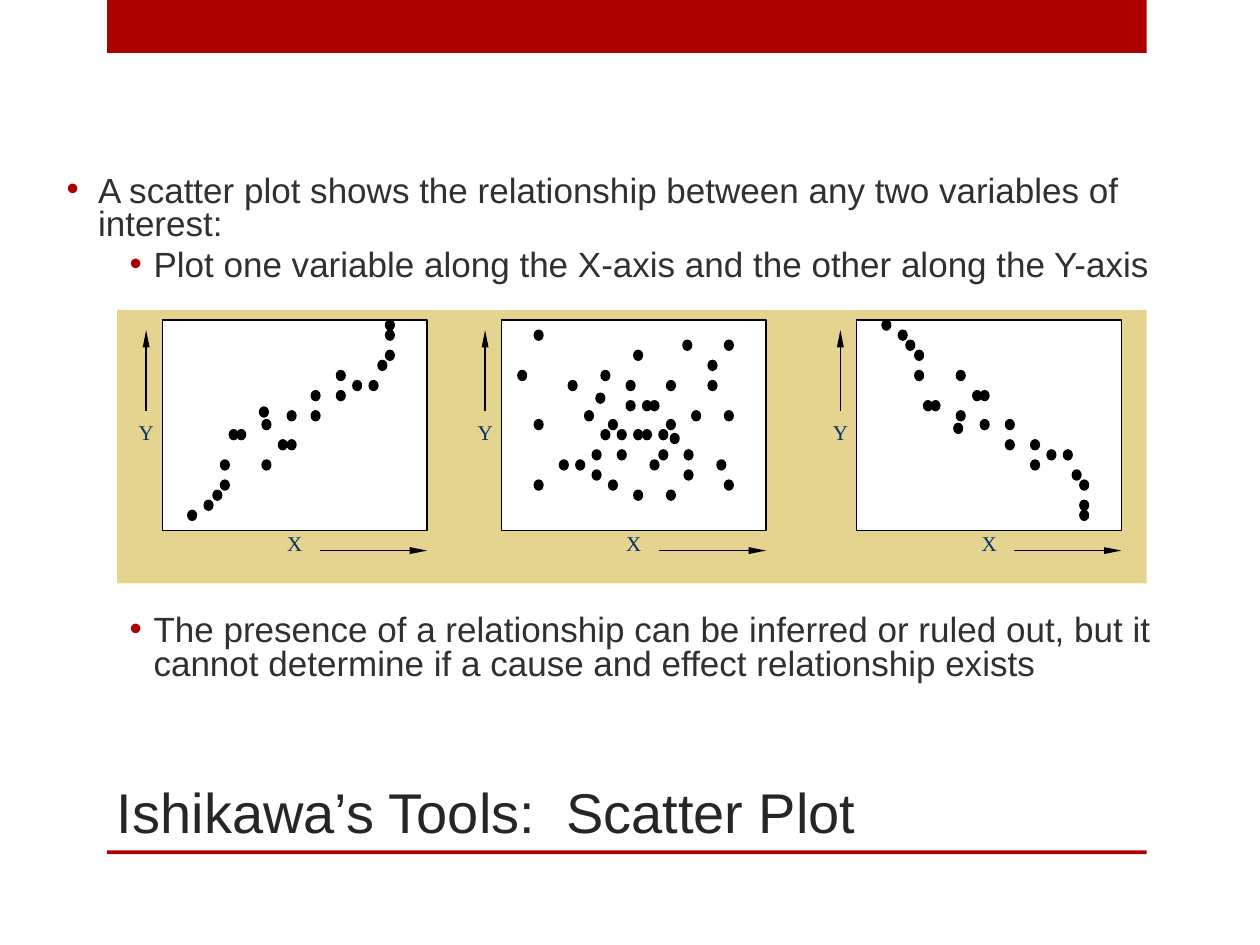
import pptx
import pptx.util
import pptx.dml.color
import pptx.enum.shapes
import pptx.enum.text
import pptx.oxml
import pptx.oxml.ns
from pptx.util import Inches

COLORS = {"red": "AD0101", "sand": "E4D490", "white": "FFFFFF", "black": "000000",
          "body": "303030", "title": "262626", "axis": "003366"}
SHAPES = pptx.enum.shapes.MSO_SHAPE
ANCHORS = pptx.enum.text.MSO_ANCHOR
NS = pptx.oxml.ns.nsdecls("a")


def add_block(shapes, kind, left, top, width, height, fill, line=None):
    block = shapes.add_shape(kind, Inches(left), Inches(top), Inches(width), Inches(height))
    block.shadow.inherit = False
    block.fill.solid()
    block.fill.fore_color.rgb = pptx.dml.color.RGBColor.from_string(COLORS[fill])
    if line:
        block.line.color.rgb = pptx.dml.color.RGBColor.from_string(COLORS[line])
        block.line.width = pptx.util.Pt(0.75)
    else:
        block.line.fill.background()


def add_text(shapes, paragraphs, box, size, color, font="Arial", anchor=ANCHORS.TOP,
             inset=(0.1, 0.05), indents=None):
    frame = shapes.add_textbox(*[Inches(length) for length in box]).text_frame
    frame.word_wrap = True
    frame.vertical_anchor = anchor
    frame.margin_left = frame.margin_right = Inches(inset[0])
    frame.margin_top = frame.margin_bottom = Inches(inset[1])
    for index, text in enumerate(paragraphs):
        paragraph = frame.add_paragraph() if index else frame.paragraphs[0]
        run = paragraph.add_run()
        run.text = text
        run.font.size = pptx.util.Pt(size)
        run.font.name = font
        run.font.color.rgb = pptx.dml.color.RGBColor.from_string(COLORS[color])
        if indents:
            level, margin, hanging = indents[index]
            paragraph.level = level
            paragraph.line_spacing = 0.8
            paragraph.space_before = pptx.util.Pt(4 if index else 0)
            properties = paragraph._p.get_or_add_pPr()
            properties.set("marL", str(Inches(margin)))
            properties.set("indent", str(-Inches(hanging)))
            for xml in (f'<a:buClr {NS}><a:srgbClr val="{COLORS["red"]}"/></a:buClr>',
                        f'<a:buFont {NS} typeface="Arial"/>',
                        f'<a:buChar {NS} char="•"/>'):
                properties.append(pptx.oxml.parse_xml(xml))


presentation = pptx.Presentation()
presentation.slide_width = Inches(10)
presentation.slide_height = Inches(7.5)
slide = presentation.slides.add_slide(presentation.slide_layouts[6])

add_block(slide.shapes, SHAPES.RECTANGLE, 0.85, 0, 8.25, 0.42, "red")
add_block(slide.shapes, SHAPES.RECTANGLE, 0.85, 6.75, 8.25, 0.03, "red")

main_level = (0, 0.25, 0.25)
sub_level = (1, 0.69, 0.19)
add_text(slide.shapes,
         ["A scatter plot shows the relationship between any two variables of interest:",
          "Plot one variable along the X-axis and the other along the Y-axis"],
         (0.43, 1.35, 9.25, 1), 20, "body", indents=[main_level, sub_level])
add_text(slide.shapes,
         ["The presence of a relationship can be inferred or ruled out, "
          "but it cannot determine if a cause and effect relationship exists"],
         (0.43, 4.84, 9.25, 0.7), 20, "body", indents=[sub_level])

add_block(slide.shapes, SHAPES.RECTANGLE, 0.93, 2.46, 8.17, 2.17, "sand")
add_text(slide.shapes, ["Ishikawa’s Tools:  Scatter Plot"], (0.83, 5.66, 8.28, 1.09),
         32, "title", anchor=ANCHORS.BOTTOM)

positive = {
    2.54: [3.06], 2.62: [3.06], 2.78: [3.06], 2.86: [3], 2.94: [2.67],
    3.02: [2.8, 2.93], 3.1: [2.47, 2.67], 3.23: [2.06], 3.26: [2.28, 2.47],
    3.33: [2.08], 3.41: [1.82, 1.88], 3.49: [2.21, 2.28], 3.65: [1.75, 2.08],
    3.81: [1.75], 3.89: [1.69], 3.97: [1.62], 4.05: [1.49],
}
unrelated = {
    2.62: [4.24], 2.7: [5.42, 5.75], 2.78: [5.03], 2.86: [5.62],
    2.94: [4.11, 4.77], 3.02: [4.51, 4.97, 5.29, 5.62], 3.12: [4.73],
    3.18: [4.97, 5.1, 5.16], 3.26: [4.64, 5.49, 5.75], 3.33: [4.24, 4.83, 5.29],
    3.41: [4.77, 4.9, 5.03, 5.1, 5.23], 3.44: [5.32],
    3.57: [4.7, 4.9, 5.23, 5.43], 3.65: [4.44, 4.57, 5.16, 5.69],
    3.73: [4.7, 5.43], 3.81: [4.24, 4.83, 5.75], 3.89: [5.03, 5.29],
}
negative = {
    2.54: [7], 2.62: [7.13], 2.7: [7.19], 2.78: [7.26], 2.94: [7.26, 7.59],
    3.1: [7.72, 7.78], 3.18: [7.33, 7.39], 3.26: [7.59], 3.33: [7.78, 7.98],
    3.36: [7.57], 3.49: [7.98, 8.18], 3.57: [8.31, 8.44], 3.65: [8.18],
    3.73: [8.51], 3.81: [8.57], 3.97: [8.57], 4.05: [8.57],
}

for plot_left, points in ((1.29, positive), (3.98, unrelated), (6.8, negative)):
    plot = slide.shapes.add_group_shape().shapes
    add_block(plot, SHAPES.RECTANGLE, plot_left, 2.54, 2.1, 1.67, "white", "black")
    for letter, left, top in (("Y", plot_left - 0.19, 3.33), ("X", plot_left + 0.99, 4.21)):
        add_text(plot, [letter], (left, top, 0.2, 0.32), 12, "axis",
                 font="Times New Roman", inset=(0, 0))
    for ends in ((plot_left + 1.25, 4.37, plot_left + 2.1, 4.37),
                 (plot_left - 0.13, 3.26, plot_left - 0.13, 2.62)):
        axis = plot.add_connector(pptx.enum.shapes.MSO_CONNECTOR.STRAIGHT,
                                  *[Inches(end) for end in ends])
        axis.line.color.rgb = pptx.dml.color.RGBColor.from_string(COLORS["black"])
        axis.line.width = pptx.util.Pt(0.75)
        axis.line._get_or_add_ln().append(pptx.oxml.parse_xml(
            f'<a:tailEnd {NS} type="triangle" w="sm" len="lg"/>'))
        axis._element.spPr.append(pptx.oxml.parse_xml(f"<a:effectLst {NS}/>"))
    for top, lefts in points.items():
        for left in lefts:
            add_block(plot, SHAPES.OVAL, left, top, 0.07, 0.08, "black", "black")

presentation.save("out.pptx")
